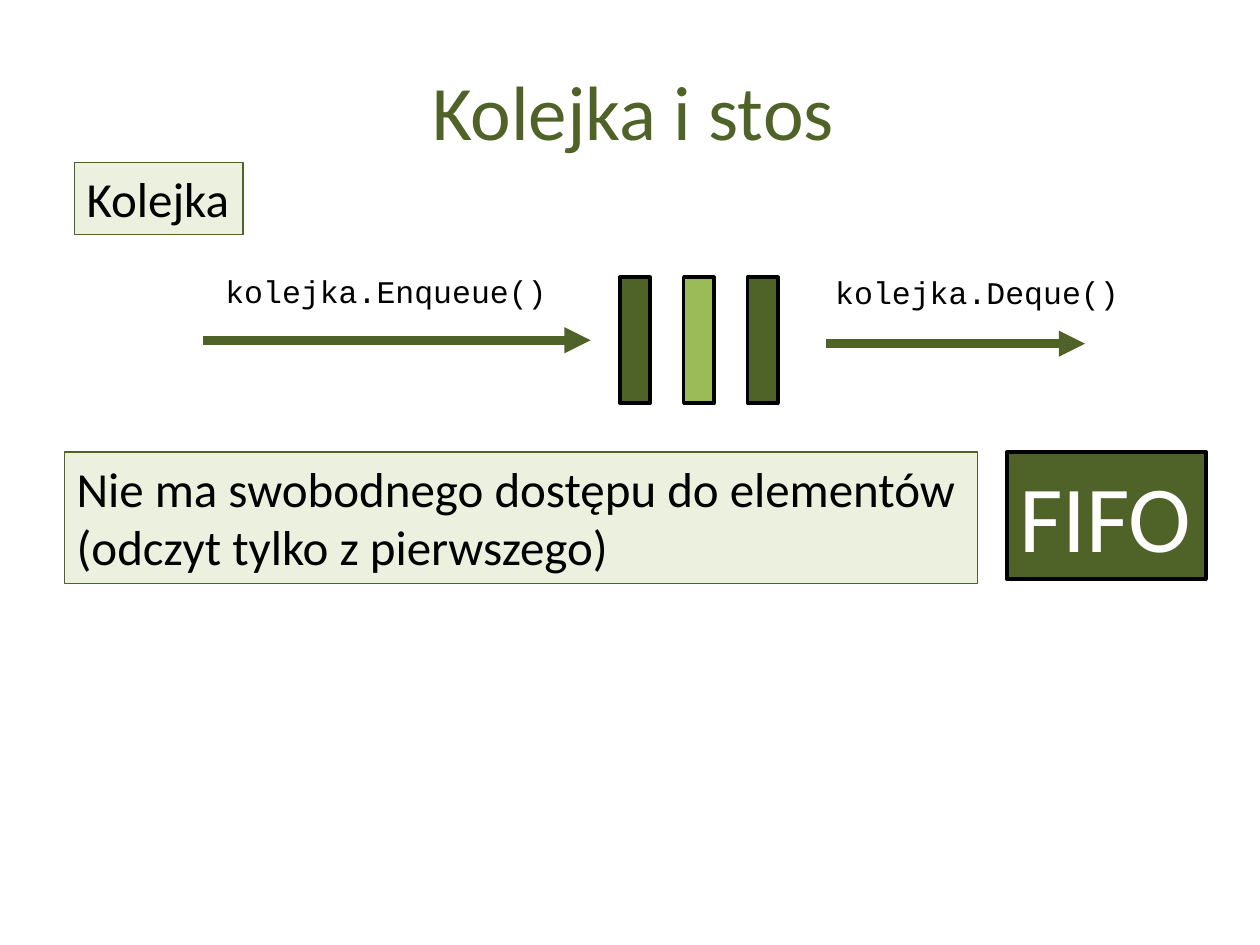
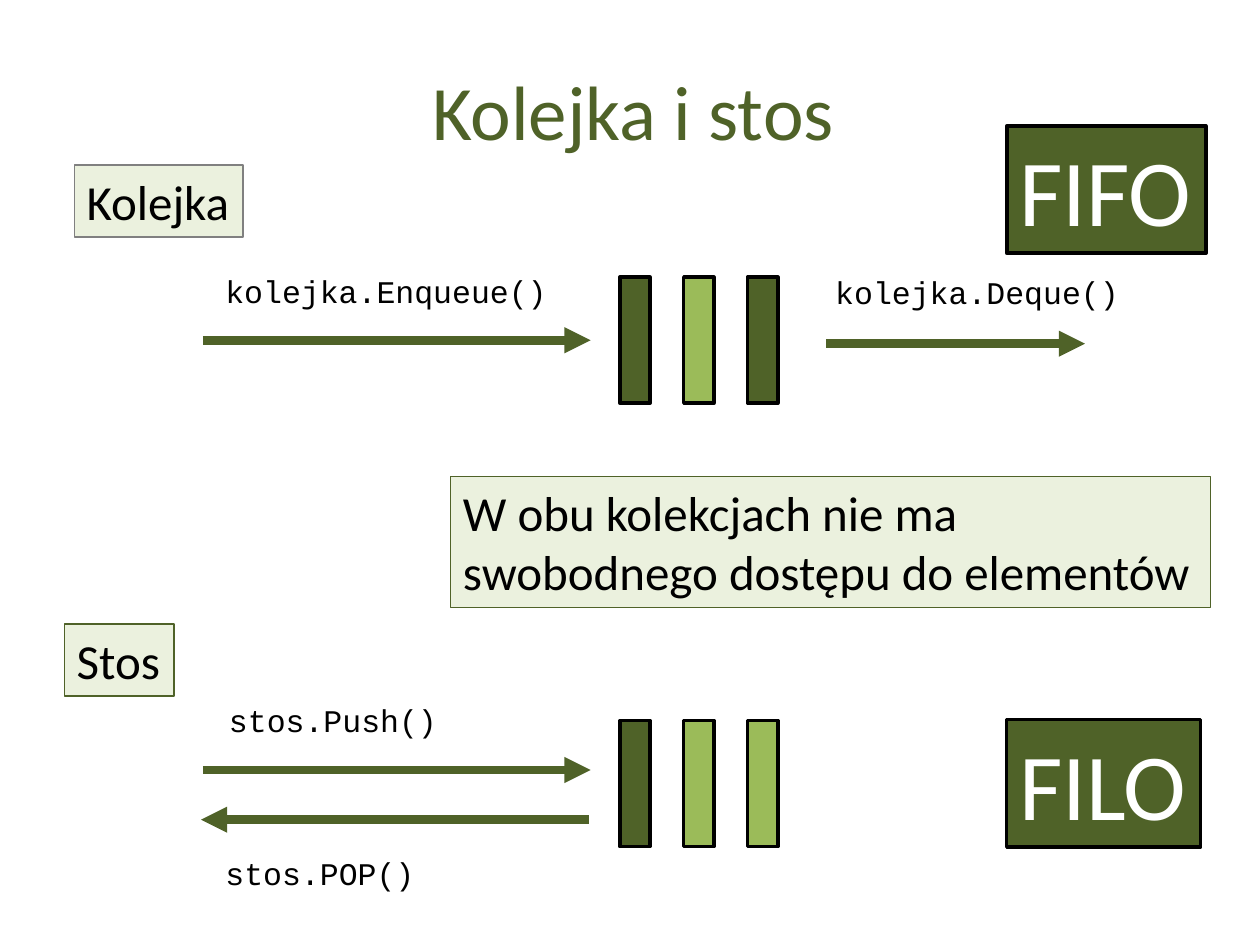
from lxml import etree
from pptx import Presentation
from pptx.dml.color import RGBColor
from pptx.enum.shapes import MSO_CONNECTOR, MSO_SHAPE
from pptx.enum.text import MSO_ANCHOR, MSO_AUTO_SIZE, PP_ALIGN
from pptx.oxml.ns import qn
from pptx.util import Pt

RECTANGLE = MSO_SHAPE.RECTANGLE
STRAIGHT = MSO_CONNECTOR.STRAIGHT
MIDDLE, TOP = MSO_ANCHOR.MIDDLE, MSO_ANCHOR.TOP
CENTER, LEFT = PP_ALIGN.CENTER, PP_ALIGN.LEFT
GROW = MSO_AUTO_SIZE.SHAPE_TO_FIT_TEXT

DARK_GREEN = RGBColor(0x4F, 0x62, 0x28)
LIGHT_GREEN = RGBColor(0x9B, 0xBB, 0x59)
PALE_GREEN = RGBColor(0xEB, 0xF1, 0xDE)
GRAY = RGBColor(0x80, 0x80, 0x80)
BLACK = RGBColor(0, 0, 0)
WHITE = RGBColor(0xFF, 0xFF, 0xFF)

BODY_FONT = "Calibri"
CODE_FONT = "Courier New"
TITLE_ONLY_LAYOUT = 5
BAR_LEFT, BAR_STEP, BAR_WIDTH, BAR_HEIGHT = 354.2, 36.5, 17.3, 72
ARROW_LEFT, ARROW_RIGHT = 115.9, 337.5
ACRONYM_LEFT = 575.3


def write_text(shape, text, size, font_name, color, align=LEFT, anchor=TOP):
    frame = shape.text_frame
    frame.text = text
    frame.vertical_anchor = anchor
    for paragraph in frame.paragraphs:
        paragraph.alignment = align
        for run in paragraph.runs:
            run.font.size = Pt(size)
            run.font.name = font_name
            run.font.color.rgb = color


def fit_to_text(shape):
    shape.text_frame.word_wrap = False
    shape.text_frame.auto_size = GROW


def add_titled_slide(presentation, title):
    slide = presentation.slides.add_slide(presentation.slide_layouts[TITLE_ONLY_LAYOUT])
    shape = slide.shapes.title
    shape.left, shape.top, shape.width, shape.height = Pt(14.4), Pt(36.7), Pt(694.8), Pt(51.8)
    write_text(shape, title, 44, BODY_FONT, DARK_GREEN, CENTER, MIDDLE)
    return slide


def add_box(slide, left, top, width, height, fill, line_color, line_width):
    shape = slide.shapes.add_shape(RECTANGLE, Pt(left), Pt(top), Pt(width), Pt(height))
    shape.shadow.inherit = False
    shape.fill.solid()
    shape.fill.fore_color.rgb = fill
    shape.line.color.rgb = line_color
    shape.line.width = Pt(line_width)
    return shape


def add_note(slide, text, left, top, width, height, line_color=DARK_GREEN):
    shape = add_box(slide, left, top, width, height, PALE_GREEN, line_color, 0.75)
    write_text(shape, text, 28, BODY_FONT, BLACK)
    fit_to_text(shape)


def add_acronym(slide, text, top, width):
    shape = add_box(slide, ACRONYM_LEFT, top, width, 72.7, DARK_GREEN, BLACK, 2)
    write_text(shape, text, 54, BODY_FONT, WHITE)
    fit_to_text(shape)


def add_bars(slide, top, colors):
    for index, color in enumerate(colors):
        left = BAR_LEFT + index * BAR_STEP
        add_box(slide, left, top, BAR_WIDTH, BAR_HEIGHT, color, BLACK, 2)


def add_arrow(slide, start, end, height):
    arrow = slide.shapes.add_connector(STRAIGHT, Pt(start), Pt(height), Pt(end), Pt(height))
    arrow.line.color.rgb = DARK_GREEN
    arrow.line.width = Pt(5)
    etree.SubElement(arrow.line._get_or_add_ln(), qn("a:tailEnd"), type="triangle")
    etree.SubElement(arrow._element.spPr, qn("a:effectLst"))


def add_code(slide, text, left, top, width):
    shape = slide.shapes.add_textbox(Pt(left), Pt(top), Pt(width), Pt(29.1))
    write_text(shape, text, 18, CODE_FONT, BLACK)
    fit_to_text(shape)


def add_queue(slide, label_top, label_line):
    add_note(slide, "Kolejka", 42.5, label_top, 96.5, 41.2, label_line)
    add_bars(slide, 158.4, (DARK_GREEN, LIGHT_GREEN, DARK_GREEN))
    add_arrow(slide, ARROW_LEFT, ARROW_RIGHT, 194.4)
    add_code(slide, "kolejka.Enqueue()", 121.7, 152, 198.7)
    add_arrow(slide, 472.3, 620, 196.4)
    add_code(slide, "kolejka.Deque()", 470.2, 152.6, 177.1)


def add_stack(slide):
    add_note(slide, "Stos", 36.7, 356.6, 62.8, 41.2)
    add_bars(slide, 411.8, (DARK_GREEN, LIGHT_GREEN, LIGHT_GREEN))
    add_arrow(slide, ARROW_LEFT, ARROW_RIGHT, 440)
    add_code(slide, "stos.Push()", 123.8, 396.9, 133.9)
    add_arrow(slide, ARROW_RIGHT - 1, ARROW_LEFT - 1, 468.4)
    add_code(slide, "stos.POP()", 121.7, 484.6, 123.1)


def main():
    presentation = Presentation()
    presentation.slide_width, presentation.slide_height = Pt(720), Pt(540)
    title = "Kolejka i stos"

    queue_slide = add_titled_slide(presentation, title)
    add_queue(queue_slide, 92.9, DARK_GREEN)
    add_note(queue_slide, "Nie ma swobodnego dostępu do elementów\n(odczyt tylko z pierwszego)",
             36.7, 258.2, 522, 75.1)
    add_acronym(queue_slide, "FIFO", 258.2, 113.8)

    comparison_slide = add_titled_slide(presentation, title)
    add_queue(comparison_slide, 94.3, GRAY)
    add_stack(comparison_slide)
    add_note(comparison_slide, "W obu kolekcjach nie ma \vswobodnego dostępu do elementów",
             257.5, 272.2, 434.2, 75.1)
    add_acronym(comparison_slide, "FIFO", 72, 113.8)
    add_acronym(comparison_slide, "FILO", 411.2, 110.9)

    presentation.save("out.pptx")


if __name__ == "__main__":
    main()
